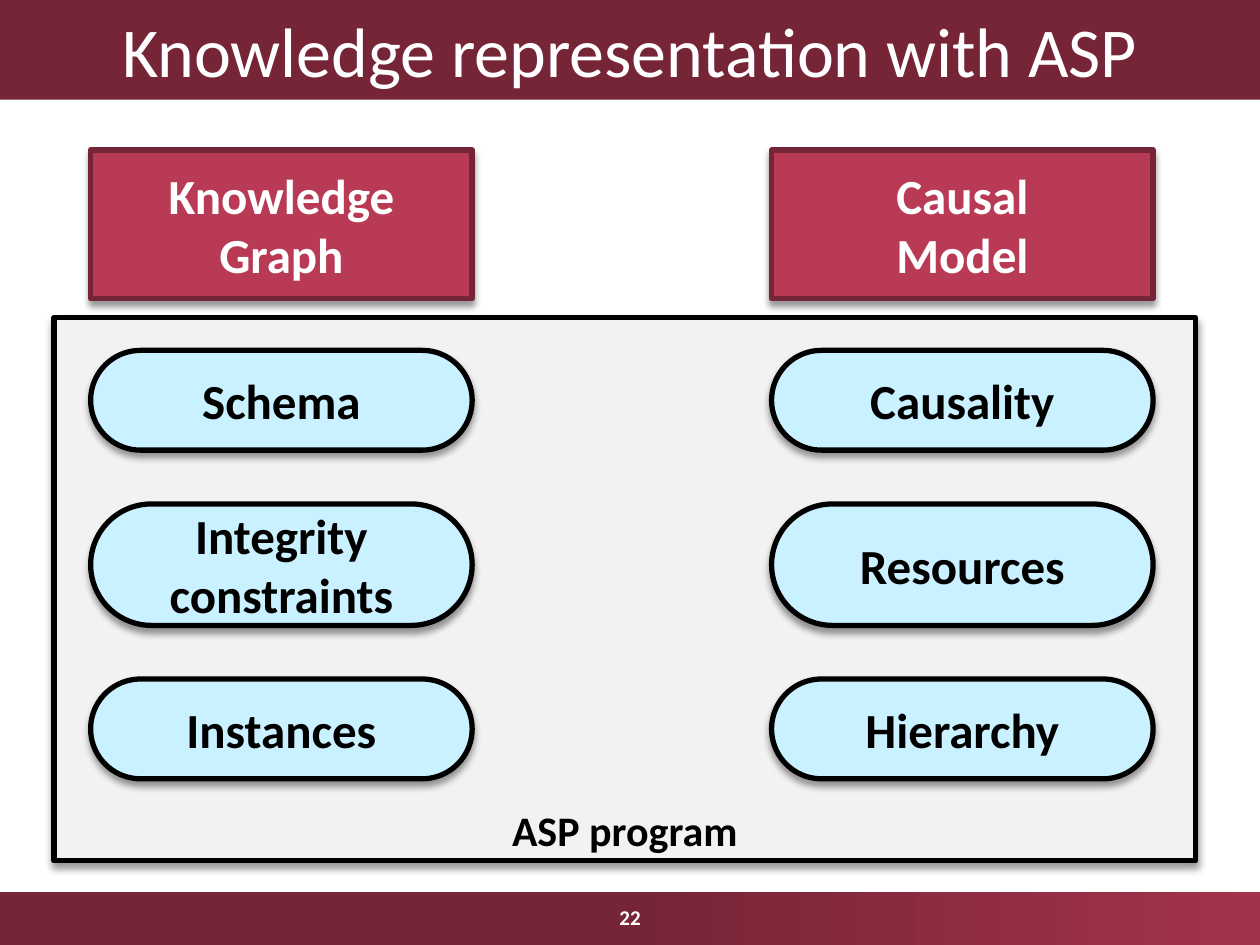
from lxml import etree
from pptx import Presentation
from pptx.dml.color import RGBColor
from pptx.enum import shapes, text
from pptx.oxml import ns
from pptx.util import Pt

WINE = RGBColor(0x76, 0x25, 0x36)
ROSE = RGBColor(0xA3, 0x33, 0x4B)
RED = RGBColor(0xB8, 0x3A, 0x55)
SKY = RGBColor(0xC9, 0xF1, 0xFF)
GREY = RGBColor(0xF2, 0xF2, 0xF2)
BLACK = RGBColor(0, 0, 0)
WHITE = RGBColor(255, 255, 255)
RECT = shapes.MSO_SHAPE.RECTANGLE
PILL = shapes.MSO_SHAPE.ROUNDED_RECTANGLE
MID, LOW = text.MSO_ANCHOR.MIDDLE, text.MSO_ANCHOR.BOTTOM

WIDE = 218
COLS = [
    (51.8, "Knowledge\vGraph", ["Schema", "Integrity\vconstraints", "Instances"]),
    (440.9, "Causal\vModel", ["Causality", "Resources", "Hierarchy"]),
]
ROWS = [(200.2, 57), (288, 69.4), (388, 57)]


def write(shape, words, size, color, bold=True, anchor=MID):
    """Put centred, formatted words in a shape."""
    frame = shape.text_frame
    frame.text = words
    frame.word_wrap = True
    frame.vertical_anchor = anchor
    para = frame.paragraphs[0]
    para.alignment = text.PP_ALIGN.CENTER
    look = {"name": "Calibri", "size": Pt(size), "bold": bold}
    for run in para.runs:
        for key, value in look.items():
            setattr(run.font, key, value)
        run.font.color.rgb = color


def shade(shape):
    """Give a shape a soft shadow below it."""
    shape.shadow.inherit = False
    effects = shape._element.spPr.find(ns.qn("a:effectLst"))
    outer = etree.SubElement(effects, ns.qn("a:outerShdw"), {
        "blurRad": str(Pt(4)), "dist": str(Pt(3)),
        "dir": "5400000", "rotWithShape": "0"})
    tint = etree.SubElement(outer, ns.qn("a:srgbClr"), val=str(BLACK))
    etree.SubElement(tint, ns.qn("a:alpha"), val="40000")


def box(slide, kind, place, fill, line):
    """Add a filled, outlined and shadowed shape."""
    shape = slide.shapes.add_shape(kind, *map(Pt, place))
    shape.fill.solid()
    shape.fill.fore_color.rgb = fill
    shape.line.color.rgb = line
    shape.line.width = Pt(3)
    shade(shape)
    if kind == PILL:
        shape.adjustments[0] = 0.5
    return shape


def head(slide, words):
    """Format the title placeholder as the top band."""
    title = slide.shapes.title
    place = {"left": 0, "top": 0, "width": 720, "height": 56.9}
    for key, value in place.items():
        setattr(title, key, Pt(value))
    title.fill.solid()
    title.fill.fore_color.rgb = WINE
    write(title, words, 40, WHITE, bold=False)


def foot(slide, number):
    """Add the gradient band and the page number."""
    band = slide.shapes.add_shape(RECT, *map(Pt, (0, 509.8, 720, 30.2)))
    band.shadow.inherit = False
    band.line.fill.background()
    band.fill.gradient()
    band.fill.gradient_angle = 0
    for stop, spot, color in zip(band.fill.gradient_stops, (0.5, 1), (WINE, ROSE)):
        stop.position = spot
        stop.color.rgb = color
    label = slide.shapes.add_textbox(*map(Pt, (279, 509.8, 162, 28.8)))
    write(label, number, 12, WHITE)


def main():
    """Build and save the slide."""
    deck = Presentation()
    deck.slide_width, deck.slide_height = Pt(720), Pt(540)
    slide = deck.slides.add_slide(deck.slide_layouts[5])
    head(slide, "Knowledge representation with ASP")
    foot(slide, "22")
    panel = box(slide, RECT, (30.8, 181.6, 652.4, 310.4), GREY, BLACK)
    write(panel, "ASP program", 24, BLACK, anchor=LOW)
    for left, name, parts in COLS:
        top = box(slide, RECT, (left, 85.7, WIDE, 85), RED, WINE)
        write(top, name, 28, WHITE)
        for part, (y, high) in zip(parts, ROWS):
            pill = box(slide, PILL, (left, y, WIDE, high), SKY, BLACK)
            write(pill, part, 28, BLACK)
    deck.save("out.pptx")


if __name__ == "__main__":
    main()
